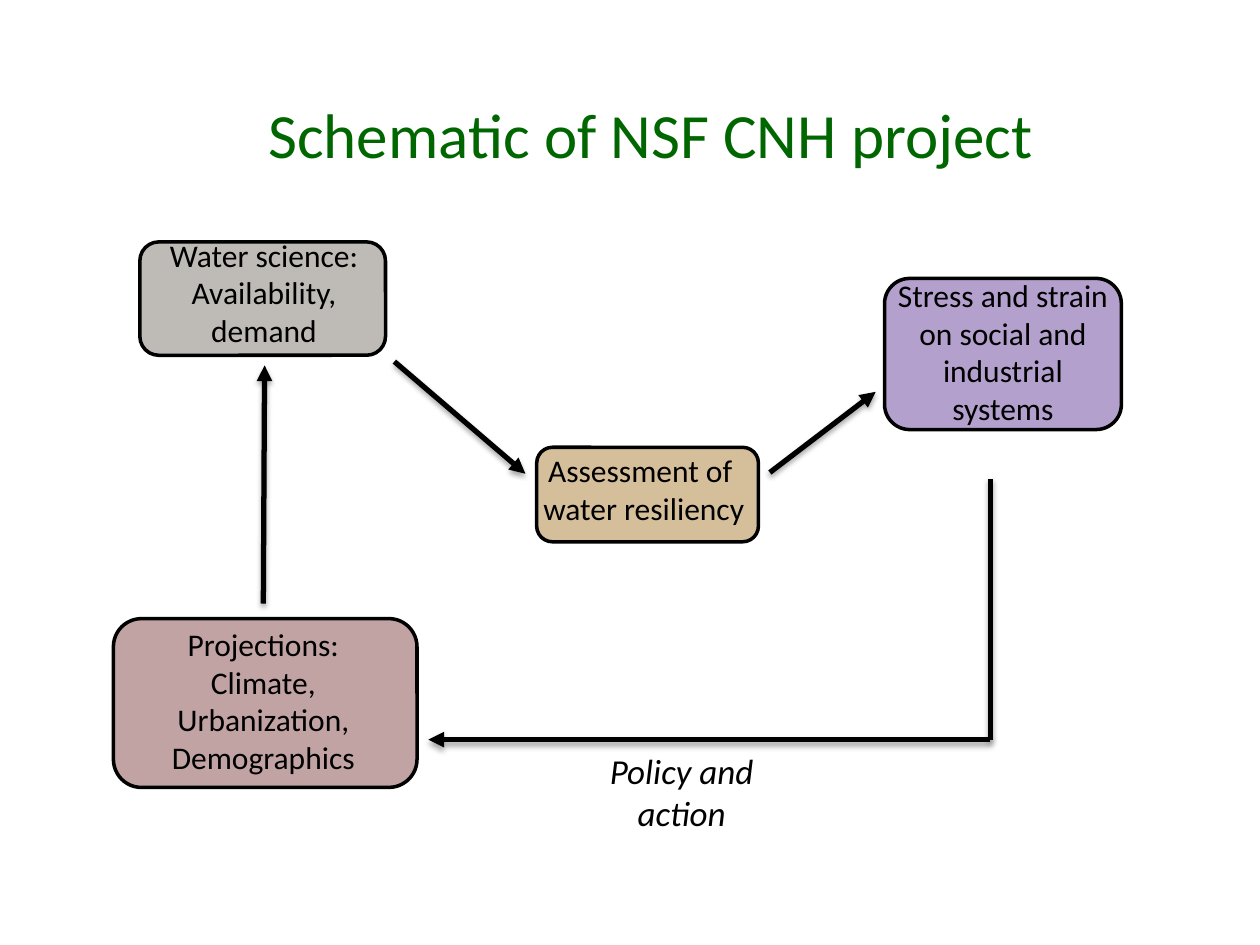
from lxml import etree
from pptx import Presentation
from pptx.dml.color import RGBColor
from pptx.enum.shapes import MSO_CONNECTOR as CONN, MSO_SHAPE as SHAPE
from pptx.enum.text import MSO_ANCHOR as ANCHOR, MSO_AUTO_SIZE as AUTO, PP_ALIGN as ALIGN
from pptx.oxml import parse_xml
from pptx.oxml.ns import nsdecls, qn
from pptx.util import Inches, Pt

# Grid of 100 columns by 75 rows
CELL = Inches(0.1)
FONT = "Calibri"
BLACK = "000000"

# fill, outline (col, row, cols, rows), label area, paragraphs
BOXES = [
    ("B3A0CC", (70.2, 22.1, 18.8, 12), (69.7, 21.4, 19.8, 13.1),
     ["Stress and strain on social and industrial systems"]),
    ("D5BF9B", (42.6, 35.5, 17.6, 7.5), (38.8, 35.3, 24.6, 7.1),
     ["Assessment of ", "water resiliency"]),
    ("BEBAB6", (11.1, 19.2, 19.5, 9), (10.7, 18.2, 20.5, 10.1),
     ["Water science:", "Availability, demand"]),
    ("C1A3A4", (9, 49.1, 24.1, 13.4), (10.7, 49.1, 20.4, 13.1),
     ["Projections:", "Climate, Urbanization, Demographics"]),
]

# start, end, arrowhead
CORNER = (78.6, 58.7)
LINES = [
    ((78.6, 38), CORNER, False),
    (CORNER, (34, 58.7), True),
    ((31.3, 28.7), (41.7, 37.6), True),
    ((20.9, 47.9), (21, 29), True),
    ((61.1, 37.5), (69.5, 31.1), True),
]

SHADOW = (
    f'<a:effectLst {nsdecls("a")}>'
    f'<a:outerShdw blurRad="{Pt(3.1)}" dist="{Pt(1.8)}" dir="5400000" rotWithShape="0">'
    '<a:srgbClr val="000000"><a:alpha val="35000"/></a:srgbClr>'
    '</a:outerShdw></a:effectLst>'
)


def color(value):
    return RGBColor.from_string(value)


def grid(*cells):
    return [round(c * CELL) for c in cells]


def add_box(s, area, fill):
    sp = s.shapes.add_shape(SHAPE.ROUNDED_RECTANGLE, *grid(*area))
    sp.shadow.inherit = False
    sp.fill.solid()
    sp.fill.fore_color.rgb = color(fill)
    sp.line.color.rgb = color(BLACK)
    sp.line.width = Pt(2)


def add_text(s, area, paragraphs, size, fill=BLACK, italic=False, anchor=ANCHOR.TOP,
             auto=AUTO.SHAPE_TO_FIT_TEXT):
    tf = s.shapes.add_textbox(*grid(*area)).text_frame
    tf.word_wrap = True
    tf.auto_size = auto
    tf.vertical_anchor = anchor
    for i, text in enumerate(paragraphs):
        p = tf.add_paragraph() if i else tf.paragraphs[0]
        p.alignment = ALIGN.CENTER
        r = p.add_run()
        r.text = text
        r.font.name = FONT
        r.font.size = Pt(size)
        r.font.italic = italic
        r.font.color.rgb = color(fill)


def add_line(s, start, end, arrow):
    cx = s.shapes.add_connector(CONN.STRAIGHT, *grid(*start, *end))
    cx.line.color.rgb = color(BLACK)
    cx.line.width = Pt(3)
    if arrow:
        etree.SubElement(cx.line._get_or_add_ln(), qn("a:tailEnd"), type="triangle")
    cx._element.spPr.append(parse_xml(SHADOW))


def main():
    prs = Presentation()
    prs.slide_width, prs.slide_height = grid(100, 75)
    s = prs.slides.add_slide(prs.slide_layouts[6])

    # Title
    add_text(s, (12.5, 9.7, 78.3, 1.8), ["Schematic of NSF CNH project"], 36,
             "006600", anchor=ANCHOR.MIDDLE, auto=AUTO.NONE)

    # Stages of the cycle
    for fill, outline, label, paragraphs in BOXES:
        add_box(s, outline, fill)
        add_text(s, label, paragraphs, 18)

    # Flow between the stages
    for start, end, arrow in LINES:
        add_line(s, start, end, arrow)
    add_text(s, (43.7, 59, 20.8, 7.7), ["Policy and action"], 20, italic=True)

    prs.save("out.pptx")


if __name__ == "__main__":
    main()
